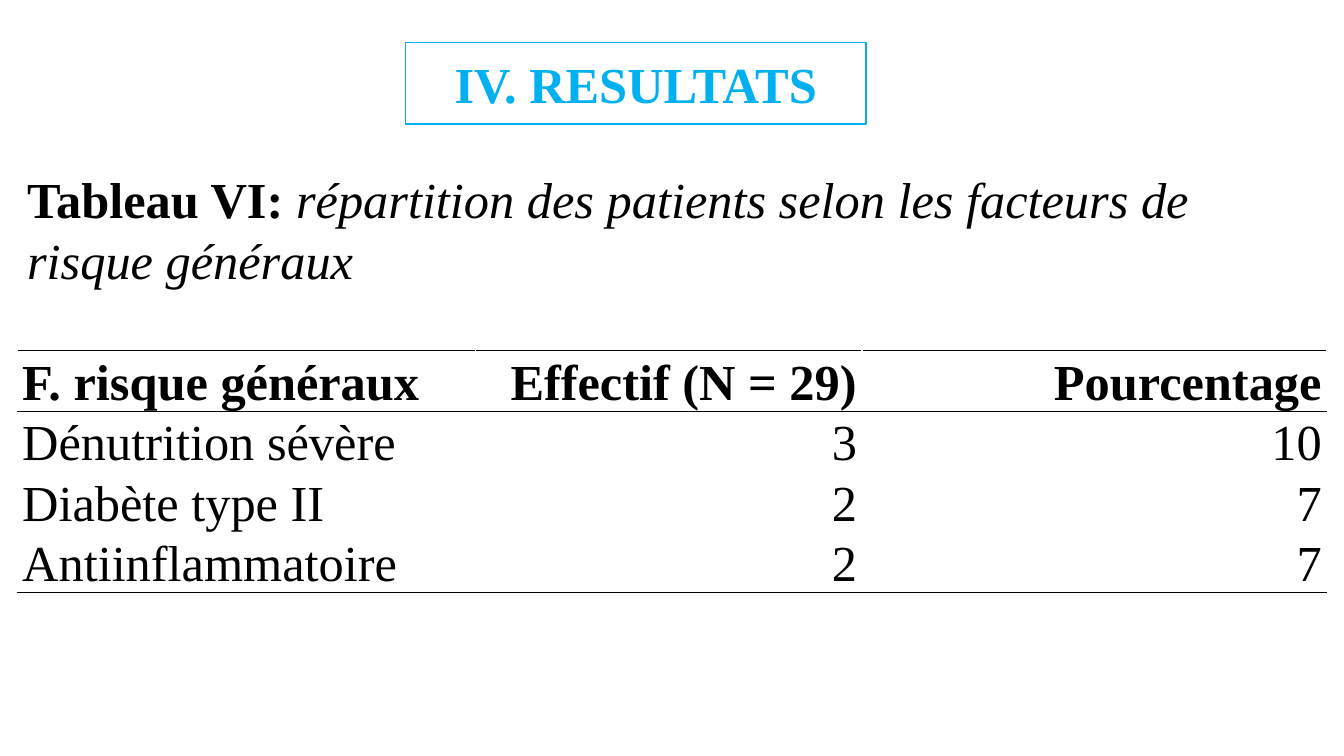
"""Build the results slide: boxed title, caption and table of general risk factors."""
from dataclasses import dataclass

from lxml.etree import SubElement
from pptx import Presentation
from pptx.dml.color import RGBColor
from pptx.enum.text import MSO_ANCHOR, PP_ALIGN
from pptx.oxml.ns import qn
from pptx.slide import Slide
from pptx.util import Emu, Inches, Pt

SLIDE_WIDTH = Inches(13.33)
SLIDE_HEIGHT = Inches(7.5)
FONT = "Times New Roman"
TEXT_SIZE = Pt(36)
RULE_WIDTH = Pt(1)
SKY = RGBColor(0x00, 0xB0, 0xF0)
BLACK = RGBColor(0x00, 0x00, 0x00)
WHITE = RGBColor(0xFF, 0xFF, 0xFF)


@dataclass(frozen=True)
class Area:
    """A rectangle in percent of the slide's width and height."""

    left: float
    top: float
    width: float
    height: float

    def box(self) -> tuple[Emu, Emu, Emu, Emu]:
        return across(self.left), down(self.top), across(self.width), down(self.height)


@dataclass(frozen=True)
class Words:
    """A stretch of text in one style."""

    text: str
    bold: bool = False
    italic: bool = False
    color: RGBColor = BLACK


@dataclass(frozen=True)
class Column:
    """A table column, with its width in percent of the slide's width."""

    heading: str
    width: float
    align: PP_ALIGN
    values: tuple[str, ...]


TITLE_AREA = Area(30.16, 5.6, 34.28, 10.8)
CAPTION_AREA = Area(1.28, 21.6, 97.45, 17.47)
TABLE_AREA = Area(1.28, 46.4, 97.45, 32)

TITLE = Words("IV. RESULTATS", bold=True, color=SKY)
CAPTION = (
    Words("Tableau VI: ", bold=True),
    Words("répartition des patients selon les facteurs de risque généraux", italic=True),
)
COLUMNS = (
    Column("F. risque généraux", 34.13, PP_ALIGN.LEFT,
           ("Dénutrition sévère", "Diabète type II", "Antiinflammatoire")),
    Column("Effectif (N = 29)", 28.73, PP_ALIGN.RIGHT, ("3", "2", "2")),
    Column("Pourcentage", 34.58, PP_ALIGN.RIGHT, ("10", "7", "7")),
)


def across(percent: float) -> Emu:
    return Emu(round(SLIDE_WIDTH * percent / 100))


def down(percent: float) -> Emu:
    return Emu(round(SLIDE_HEIGHT * percent / 100))


def write(paragraph, *stretches: Words, align: PP_ALIGN = PP_ALIGN.LEFT) -> None:
    paragraph.alignment = align
    for words in stretches:
        run = paragraph.add_run()
        run.text = words.text
        run.font.name = FONT
        run.font.size = TEXT_SIZE
        run.font.bold = words.bold
        run.font.italic = words.italic
        run.font.color.rgb = words.color


def rule_cell(cell, top: RGBColor, bottom: RGBColor) -> None:
    properties = cell._tc.get_or_add_tcPr()
    for side, color in (("L", WHITE), ("R", WHITE), ("T", top), ("B", bottom)):
        rule = SubElement(properties, qn(f"a:ln{side}"), w=str(RULE_WIDTH))
        SubElement(SubElement(rule, qn("a:solidFill")), qn("a:srgbClr"), val=str(color))


def add_title(slide: Slide) -> None:
    title = slide.shapes.add_shape(1, *TITLE_AREA.box())
    title.shadow.inherit = False
    title.fill.background()
    title.line.color.rgb = SKY
    title.line.width = RULE_WIDTH
    title.text_frame.vertical_anchor = MSO_ANCHOR.MIDDLE
    write(title.text_frame.paragraphs[0], TITLE, align=PP_ALIGN.CENTER)


def add_caption(slide: Slide) -> None:
    caption = slide.shapes.add_textbox(*CAPTION_AREA.box()).text_frame
    caption.word_wrap = True
    write(caption.paragraphs[0], *CAPTION)


def add_risk_table(slide: Slide) -> None:
    row_count = 1 + len(COLUMNS[0].values)
    last = row_count - 1
    table = slide.shapes.add_table(row_count, len(COLUMNS), *TABLE_AREA.box()).table
    table.horz_banding = False
    for index, column in enumerate(COLUMNS):
        table.columns[index].width = across(column.width)
        for row, text in enumerate((column.heading, *column.values)):
            cell = table.cell(row, index)
            cell.margin_left = cell.margin_right = Inches(0.05)
            cell.margin_top = cell.margin_bottom = 0
            cell.vertical_anchor = MSO_ANCHOR.BOTTOM
            rule_cell(cell, top=BLACK if row <= 1 else WHITE,
                      bottom=BLACK if row in (0, last) else WHITE)
            cell.fill.background()
            write(cell.text_frame.paragraphs[0], Words(text, bold=row == 0),
                  align=column.align)


def main() -> None:
    presentation = Presentation()
    presentation.slide_width = SLIDE_WIDTH
    presentation.slide_height = SLIDE_HEIGHT
    slide = presentation.slides.add_slide(presentation.slide_layouts[6])
    add_title(slide)
    add_risk_table(slide)
    add_caption(slide)
    presentation.save("out.pptx")


if __name__ == "__main__":
    main()
